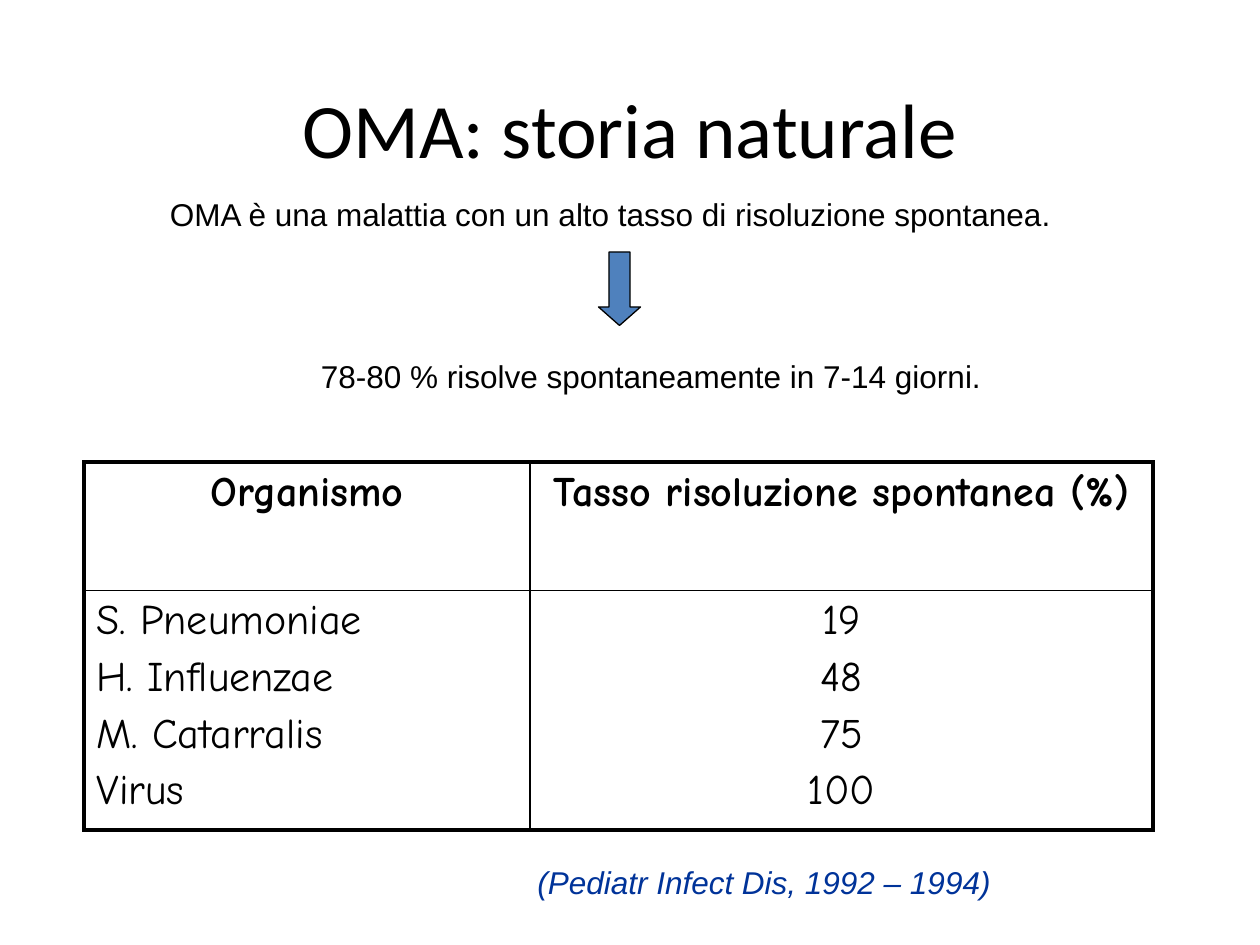
from lxml import etree
from pptx import Presentation
from pptx.dml.color import RGBColor
from pptx.enum.shapes import MSO_SHAPE
from pptx.enum.text import MSO_ANCHOR, PP_ALIGN
from pptx.oxml.ns import qn
from pptx.util import Inches, Pt

LEFT, CENTER = PP_ALIGN.LEFT, PP_ALIGN.CENTER
TOP, MIDDLE = MSO_ANCHOR.TOP, MSO_ANCHOR.MIDDLE
BLACK = RGBColor(0, 0, 0)
BLUE = RGBColor(0x4F, 0x81, 0xBD)
NAVY = RGBColor(0, 0x33, 0x99)

presentation = Presentation()
presentation.slide_width = Inches(10)
presentation.slide_height = Inches(7.5)
slide = presentation.slides.add_slide(presentation.slide_layouts[6])

# The slide is a grid of 120 columns by 90 rows
COLUMN = presentation.slide_width // 120
ROW = presentation.slide_height // 90


def place(left, top, width, height):
    """Turn grid units into slide lengths."""
    return [int(left * COLUMN), int(top * ROW), int(width * COLUMN), int(height * ROW)]


def write(frame, lines, font, space=0):
    """Fill a frame with (text, alignment) lines, with space between them."""
    for index, (text, alignment) in enumerate(lines):
        paragraph = frame.paragraphs[0] if index == 0 else frame.add_paragraph()
        paragraph.text = text
        paragraph.alignment = alignment
        if index:
            paragraph.space_before = Pt(space)
        for name, value in font.items():
            if name == "color":
                paragraph.runs[0].font.color.rgb = value
            else:
                setattr(paragraph.runs[0].font, name, value)


title_font = {"name": "Calibri", "size": Pt(44), "color": BLACK}
body_font = {"name": "Arial", "size": Pt(18), "color": BLACK}
source_font = {**body_font, "color": NAVY, "italic": True}
table_font = {"name": "Comic Neue", "size": Pt(24), "color": BLACK}

statements = [
    ("OMA è una malattia con un alto tasso di risoluzione spontanea.", LEFT),
    ("78-80 % risolve spontaneamente in 7-14 giorni.", CENTER),
]
text_boxes = [
    ((6, 6, 108, 12.4), [("OMA: storia naturale", CENTER)], title_font, MIDDLE, True),
    ((15, 18, 94, 21), statements, body_font, TOP, True),
    ((50, 81.6, 45.6, 4.8), [("(Pediatr Infect Dis, 1992 – 1994)", LEFT)],
     source_font, TOP, False),
]
for area, lines, font, anchor, wrap in text_boxes:
    frame = slide.shapes.add_textbox(*place(*area)).text_frame
    frame.word_wrap = wrap
    frame.vertical_anchor = anchor
    write(frame, lines, font, space=71)

arrow = slide.shapes.add_shape(MSO_SHAPE.DOWN_ARROW, *place(57, 24, 4, 7))
arrow.shadow.inherit = False
arrow.adjustments[0], arrow.adjustments[1] = 0.5, 0.44
arrow.fill.solid()
arrow.fill.fore_color.rgb = BLUE
arrow.line.color.rgb = BLACK
arrow.line.width = Pt(0.75)

table_rows = [
    [["Organismo"], ["Tasso risoluzione spontanea (%)"]],
    [["S. Pneumoniae", "H. Influenzae", "M. Catarralis", "Virus"],
     ["19", "48", "75", "100"]],
]
table = slide.shapes.add_table(2, 2, *place(8, 44, 101.8, 35)).table
table.first_row = table.horz_banding = False
for column, width in zip(table.columns, (42.5, 59.3)):
    column.width = int(width * COLUMN)
for row, height in zip(table.rows, (12.25, 22.75)):
    row.height = int(height * ROW)

for row_index, row_texts in enumerate(table_rows):
    for column_index, texts in enumerate(row_texts):
        cell = table.cell(row_index, column_index)
        header = row_index == 0
        alignment = CENTER if header or column_index else LEFT
        lines = [(text, alignment) for text in texts]
        write(cell.text_frame, lines, {**table_font, "bold": header}, space=4.8)

        # Outer edges are thick, inner ones thin
        properties = cell._tc.get_or_add_tcPr()
        outer_edges = {"a:lnL": column_index == 0, "a:lnR": column_index == 1,
                       "a:lnT": header, "a:lnB": not header}
        for edge, outer in outer_edges.items():
            border = etree.SubElement(properties, qn(edge), w=str(Pt(2.25 if outer else 1)))
            fill = etree.SubElement(border, qn("a:solidFill"))
            etree.SubElement(fill, qn("a:srgbClr"), val=str(BLACK))
        cell.fill.background()

presentation.save("out.pptx")
